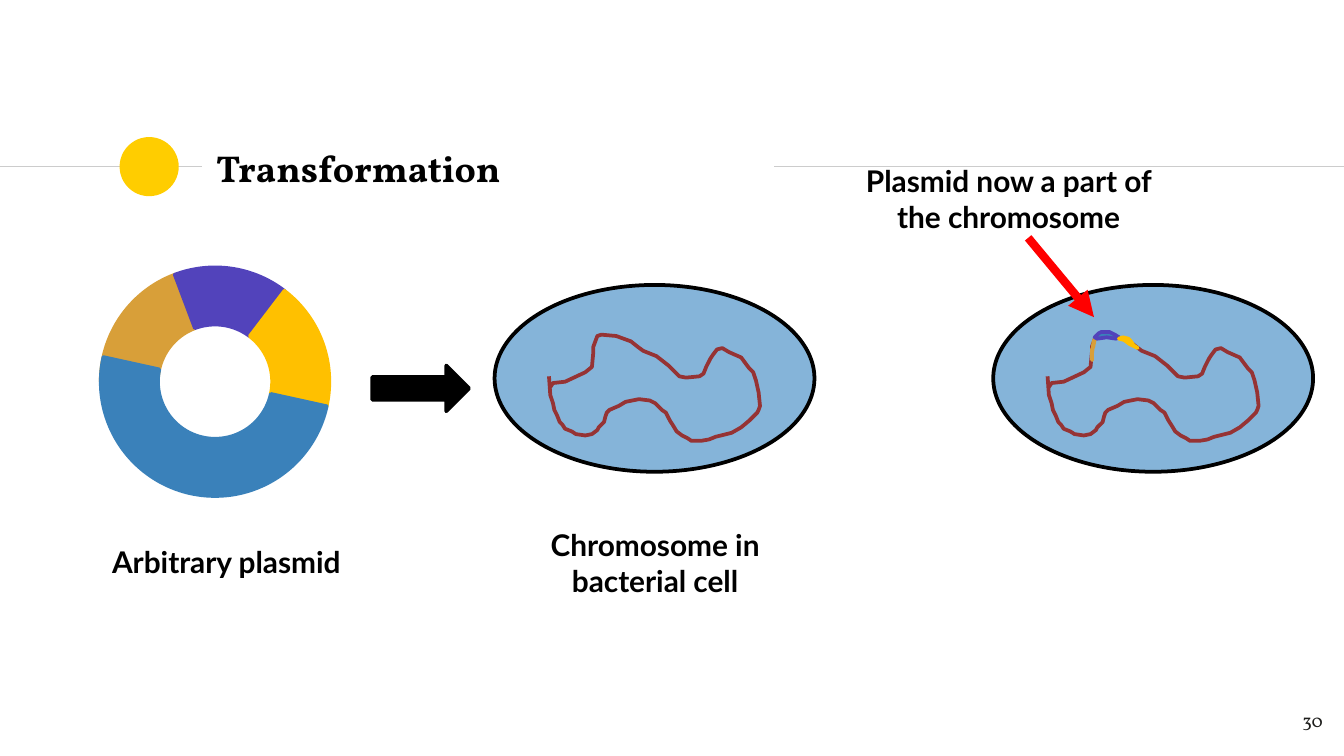
from dataclasses import dataclass
from itertools import pairwise

from lxml import etree
from pptx import Presentation
from pptx import util as u
from pptx.dml.color import RGBColor
from pptx.enum import shapes, text
from pptx.oxml.ns import qn

# The grid has 100 columns and 56.25 rows, each a tenth of an inch
COLUMNS, ROWS = 100, 56.25
CELL = u.Inches(0.1)
SHAPE = shapes.MSO_SHAPE


@dataclass(frozen=True)
class Theme:
    black: str = "000000"
    number: str = "1D1D1B"
    rule: str = "CCCCCC"
    accent: str = "FFCD00"
    cytoplasm: str = "85B4D9"
    chromosome: str = "963334"
    pointer: str = "FF0000"
    tan: str = "D89F39"
    purple: str = "5243BB"
    yellow: str = "FFC000"
    blue: str = "3A81BA"
    heading_font: str = "Vollkorn"
    body_font: str = "Lato"
    title_size: float = 20
    caption_size: float = 16
    number_size: float = 10
    outline: float = 2


@dataclass(frozen=True)
class Box:
    left: float
    top: float
    width: float
    height: float

    def emu(self) -> list[int]:
        return [span(n) for n in (self.left, self.top, self.width, self.height)]


@dataclass(frozen=True)
class Label:
    words: str
    box: Box
    font: str
    size: float
    color: str = "000000"
    bold: bool = True
    align: text.PP_ALIGN = text.PP_ALIGN.CENTER
    anchor: text.MSO_ANCHOR = text.MSO_ANCHOR.TOP
    inset: float = 0.5


@dataclass(frozen=True)
class Gene:
    color: str
    points: list[tuple[int, int]]


THEME = Theme()

# Outlines in hundredths of an inch from the chromosome's corner
CHROMOSOME = [
    (0, 31), (1, 45), (3, 51), (4, 56), (6, 60), (8, 65), (10, 67), (12, 70),
    (17, 72), (20, 74), (27, 75), (32, 74), (36, 71), (37, 69), (41, 65),
    (42, 61), (43, 58), (45, 56), (52, 53), (57, 50), (62, 49), (67, 48),
    (75, 49), (79, 51), (84, 56), (87, 58), (90, 64), (92, 67), (95, 72),
    (99, 75), (103, 77), (106, 79), (113, 79), (119, 78), (124, 76), (136, 73),
    (143, 69), (149, 64), (155, 58), (156, 56), (157, 53), (156, 43), (154, 34),
    (152, 28), (149, 25), (143, 17), (134, 13), (129, 10), (125, 11), (122, 15),
    (120, 18), (117, 24), (115, 29), (112, 31), (102, 32), (97, 31), (89, 23),
    (80, 16), (70, 12), (66, 9), (61, 5), (50, 1), (39, 0), (36, 1), (33, 9),
    (33, 13), (32, 24), (27, 28), (12, 35), (3, 36), (1, 39),
]
GENES = [
    Gene(THEME.tan, [(33, 17), (33, 11), (34, 9), (35, 3), (34, 6), (33, 14), (33, 19)]),
    Gene(THEME.purple, [(35, 2), (38, -1), (40, -2), (46, -2), (50, 0), (53, 2),
                        (51, 3), (44, 2), (37, 3)]),
    Gene(THEME.yellow, [(53, 3), (57, 4), (61, 7), (65, 9), (67, 10), (64, 8),
                        (62, 5), (60, 3), (56, 2)]),
]


def span(cells: float) -> int:
    return int(round(cells * CELL))


def paint(shape, fill: str | None, line: str | None = None) -> None:
    shape.shadow.inherit = False
    if fill:
        shape.fill.solid()
        shape.fill.fore_color.rgb = RGBColor.from_string(fill)
    else:
        shape.fill.background()
    if line:
        shape.line.color.rgb = RGBColor.from_string(line)
        shape.line.width = u.Pt(THEME.outline)
    else:
        shape.line.fill.background()


def add_preset(parent, kind: SHAPE, box: Box, fill: str, line: str | None = None):
    shape = parent.add_shape(kind, *box.emu())
    paint(shape, fill, line)
    return shape


def add_line(slide, start: tuple, end: tuple, color: str, width: float, arrow: bool = False) -> None:
    connector = slide.shapes.add_connector(
        shapes.MSO_CONNECTOR.STRAIGHT, *(span(n) for n in start + end))
    connector.line.color.rgb = RGBColor.from_string(color)
    connector.line.width = u.Pt(width)
    if arrow:
        etree.SubElement(connector.line._get_or_add_ln(), qn("a:tailEnd"), type="triangle")
    etree.SubElement(connector._element.spPr, qn("a:effectLst"))


def add_label(slide, label: Label) -> None:
    frame = slide.shapes.add_textbox(*label.box.emu()).text_frame
    frame.word_wrap = True
    frame.vertical_anchor = label.anchor
    frame.margin_left = frame.margin_right = span(1)
    frame.margin_top = frame.margin_bottom = span(label.inset)
    frame.text = label.words
    paragraph = frame.paragraphs[0]
    paragraph.alignment = label.align
    font = paragraph.runs[0].font
    font.name, font.size, font.bold = label.font, u.Pt(label.size), label.bold
    font.color.rgb = RGBColor.from_string(label.color)


def add_outline(slide, points: list, left: float, top: float, line: str, fill: str | None = None) -> None:
    builder = slide.shapes.build_freeform(*points[0], scale=CELL / 10)
    builder.add_line_segments(points[1:], close=fill is not None)
    paint(builder.convert_to_shape(span(left), span(top)), fill, line)


def add_bacterium(slide, left: float, genes: list[Gene]) -> None:
    top = 21.2
    add_preset(slide.shapes, SHAPE.OVAL, Box(left, top, 23.8, 13.9), THEME.cytoplasm, THEME.black)
    inner_left, inner_top = left + 4.05, top + 3.7
    add_outline(slide, CHROMOSOME, inner_left, inner_top, THEME.chromosome)
    for gene in genes:
        add_outline(slide, gene.points, inner_left, inner_top, gene.color, THEME.blue)


def add_plasmid(slide, box: Box) -> None:
    group = slide.shapes.add_group_shape()
    colors = [THEME.tan, THEME.purple, THEME.yellow, THEME.blue]
    turns = [0, 69.4, 127.4, 192.4, 372.4]
    for color, (turn, following) in zip(colors, pairwise(turns)):
        arc = add_preset(group.shapes, SHAPE.BLOCK_ARC, box, color, color)
        # Angles are stored in 60000ths of a degree, adjustments in 100000ths
        arc.adjustments[0] = 180 * 0.6
        arc.adjustments[1] = (180 + following - turn) % 360 * 0.6
        arc.adjustments[2] = 0.25
        arc.rotation = turn


def caption(words: str, box: Box) -> Label:
    return Label(words, box, THEME.body_font, THEME.caption_size)


def main() -> None:
    presentation = Presentation()
    presentation.slide_width, presentation.slide_height = span(COLUMNS), span(ROWS)
    slide = presentation.slides.add_slide(presentation.slide_layouts[6])

    # Heading band
    for start, end in ((0, 15), (57.6, COLUMNS)):
        add_line(slide, (start, 12.4), (end, 12.4), THEME.rule, 0.75)
    add_preset(slide.shapes, SHAPE.OVAL, Box(8.9, 10.2, 4.4, 4.4), THEME.accent)
    add_label(slide, Label("Transformation", Box(15.1, 10.1, 42.4, 4.8), THEME.heading_font,
                           THEME.title_size, align=text.PP_ALIGN.LEFT,
                           anchor=text.MSO_ANCHOR.MIDDLE, inset=1))
    add_label(slide, Label("30", Box(93.4, 51.9, 6, 4.3), THEME.heading_font, THEME.number_size,
                           THEME.number, False, text.PP_ALIGN.RIGHT, inset=1))

    # Plasmid entering the cell
    add_plasmid(slide, Box(7.5, 19.9, 17, 17))
    add_preset(slide.shapes, SHAPE.RIGHT_ARROW, Box(27.7, 27.2, 7.2, 3.4), THEME.black, THEME.black)
    add_bacterium(slide, 36.8, [])

    # Transformed cell
    add_bacterium(slide, 73.9, GENES)
    add_line(slide, (76.5, 17.7), (81.4, 23.6), THEME.pointer, 4.5, arrow=True)

    # Captions
    add_label(slide, caption("Arbitrary plasmid", Box(7.3, 40, 19.1, 3.7)))
    add_label(slide, caption("Chromosome in bacterial cell", Box(39.2, 38.7, 19.1, 6.4)))
    add_label(slide, caption("Plasmid now a part of the chromosome", Box(62.8, 11.6, 24.5, 6.4)))

    presentation.save("out.pptx")


if __name__ == "__main__":
    main()
